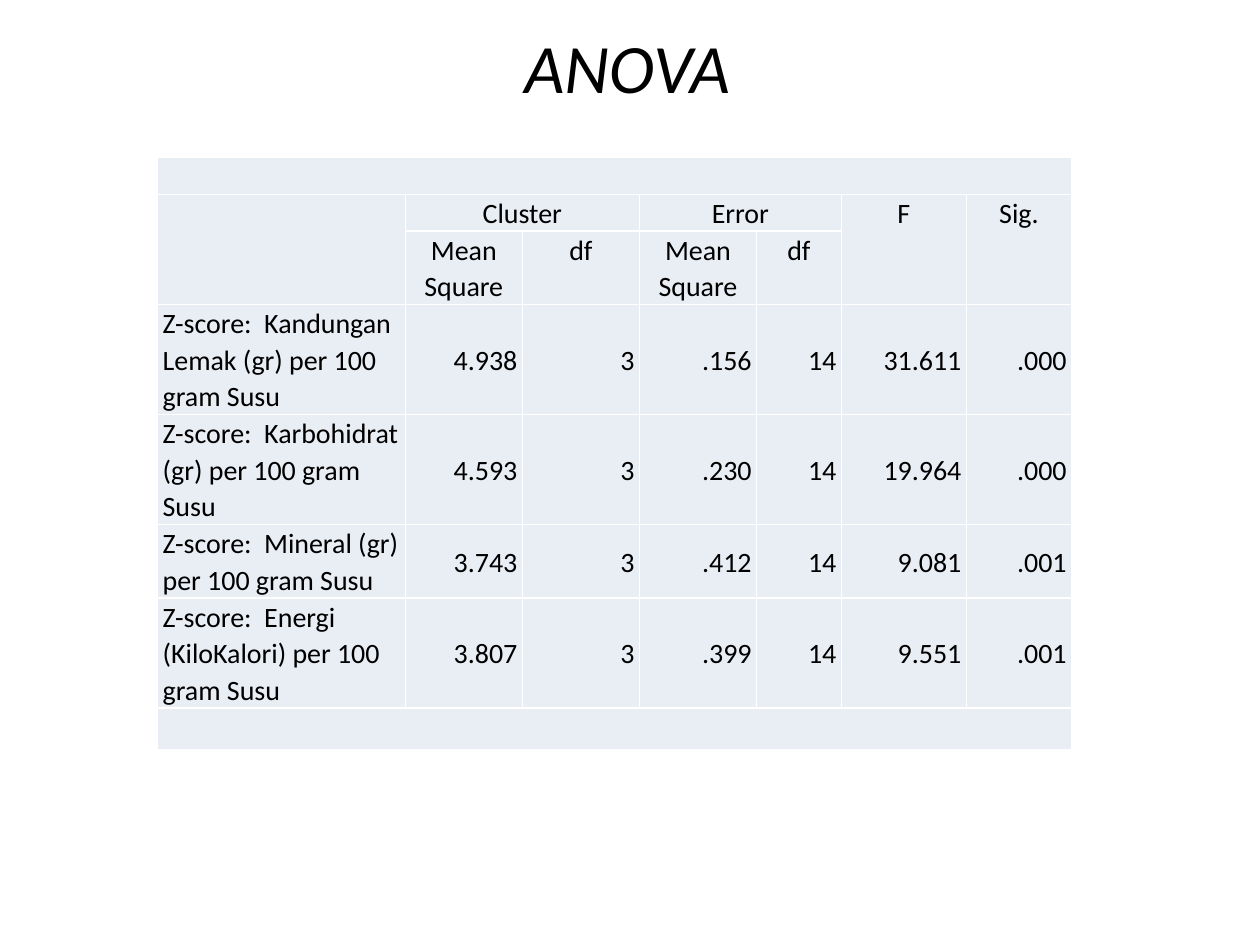
from typing import NamedTuple

from lxml import etree
from pptx import Presentation
from pptx.dml import color as dml
from pptx.enum import text as enums
from pptx.oxml import ns
from pptx.util import Cm, Pt

FONT = "Calibri"
BLACK, WHITE, PALE = "000000", "FFFFFF", "E9EDF4"
LEFT, CENTER, RIGHT = (
    enums.PP_ALIGN.LEFT, enums.PP_ALIGN.CENTER, enums.PP_ALIGN.RIGHT)
TOP, MIDDLE = enums.MSO_ANCHOR.TOP, enums.MSO_ANCHOR.MIDDLE
COLUMN_WIDTHS = (4.99, 2.36, 2.36, 2.36, 1.71, 2.52, 2.12)
ROW_HEIGHTS = (0.74, 0.74, 1.47, 2.22, 2.22, 1.47, 2.22, 0.84)
FIRST_SCORE_ROW = 3


class Heading(NamedTuple):
    row: int
    column: int
    label: str = ""
    rows: int = 1
    columns: int = 1


class Score(NamedTuple):
    variable: str
    cluster_square: str
    cluster_df: str
    error_square: str
    error_df: str
    f_value: str
    significance: str


HEADINGS = (
    Heading(0, 0, columns=7),
    Heading(1, 0, rows=2),
    Heading(1, 1, "Cluster", columns=2),
    Heading(1, 3, "Error", columns=2),
    Heading(1, 5, "F", rows=2),
    Heading(1, 6, "Sig.", rows=2),
    Heading(2, 1, "Mean Square"),
    Heading(2, 2, "df"),
    Heading(2, 3, "Mean Square"),
    Heading(2, 4, "df"),
    Heading(7, 0, columns=7),
)

SCORES = (
    Score("Z-score:  Kandungan Lemak (gr) per 100 gram Susu",
          "4.938", "3", ".156", "14", "31.611", ".000"),
    Score("Z-score:  Karbohidrat (gr) per 100 gram Susu",
          "4.593", "3", ".230", "14", "19.964", ".000"),
    Score("Z-score:  Mineral (gr) per 100 gram Susu",
          "3.743", "3", ".412", "14", "9.081", ".001"),
    Score("Z-score:  Energi (KiloKalori) per 100 gram Susu",
          "3.807", "3", ".399", "14", "9.551", ".001"),
)


def rgb(value: str) -> dml.RGBColor:
    return dml.RGBColor.from_string(value)


def style_font(font, size: float, italic: bool = False) -> None:
    font.name = FONT
    font.size = Pt(size)
    font.italic = italic
    font.bold = False
    font.color.rgb = rgb(BLACK)


def add_borders(cell) -> None:
    properties = cell._tc.get_or_add_tcPr()
    for position, side in enumerate(("lnL", "lnR", "lnT", "lnB")):
        line = etree.Element(ns.qn(f"a:{side}"), w=str(Pt(1)))
        fill = etree.SubElement(line, ns.qn("a:solidFill"))
        etree.SubElement(fill, ns.qn("a:srgbClr"), val=WHITE)
        properties.insert(position, line)


def style_cell(cell) -> None:
    cell.fill.solid()
    cell.fill.fore_color.rgb = rgb(PALE)
    cell.margin_left = cell.margin_right = 0
    cell.margin_top = cell.margin_bottom = 0
    add_borders(cell)


def write_cell(cell, label: str, alignment, anchor) -> None:
    cell.vertical_anchor = anchor
    paragraph = cell.text_frame.paragraphs[0]
    paragraph.text = label
    paragraph.alignment = alignment
    paragraph.line_spacing = 1.07
    indents = paragraph._p.get_or_add_pPr()
    for margin in ("marL", "marR"):
        indents.set(margin, str(Cm(0.1)))
    for run in paragraph.runs:
        style_font(run.font, 16)
    if not label:
        etree.SubElement(paragraph._p, ns.qn("a:endParaRPr"), sz="1600")


def add_title(slide) -> None:
    title = slide.shapes.title
    title.left, title.top = Cm(1.47), Cm(0.76)
    title.width, title.height = Cm(22.66), Cm(1.14)
    frame = title.text_frame
    frame.text = "ANOVA "
    frame.vertical_anchor = MIDDLE
    frame.auto_size = enums.MSO_AUTO_SIZE.NONE
    frame.paragraphs[0].alignment = CENTER
    style_font(frame.paragraphs[0].runs[0].font, 39.6, italic=True)


def add_anova_table(slide) -> None:
    table = slide.shapes.add_table(
        len(ROW_HEIGHTS), len(COLUMN_WIDTHS), Cm(3.18), Cm(3.18),
        Cm(sum(COLUMN_WIDTHS)), Cm(sum(ROW_HEIGHTS))).table
    table.first_row = table.horz_banding = False
    for column, width in zip(table.columns, COLUMN_WIDTHS):
        column.width = Cm(width)
    for row, height in zip(table.rows, ROW_HEIGHTS):
        row.height = Cm(height)
    for cell in table.iter_cells():
        style_cell(cell)
    for heading in HEADINGS:
        cell = table.cell(heading.row, heading.column)
        if heading.rows * heading.columns > 1:
            cell.merge(table.cell(heading.row + heading.rows - 1,
                                  heading.column + heading.columns - 1))
        write_cell(cell, heading.label, CENTER, TOP)
    for row, score in enumerate(SCORES, FIRST_SCORE_ROW):
        for column, value in enumerate(score):
            write_cell(table.cell(row, column), value,
                       RIGHT if column else LEFT, MIDDLE)


def main() -> None:
    deck = Presentation()
    deck.slide_width, deck.slide_height = Cm(25.4), Cm(19.05)
    slide = deck.slides.add_slide(deck.slide_layouts[5])
    add_title(slide)
    add_anova_table(slide)
    deck.save("out.pptx")


if __name__ == "__main__":
    main()
